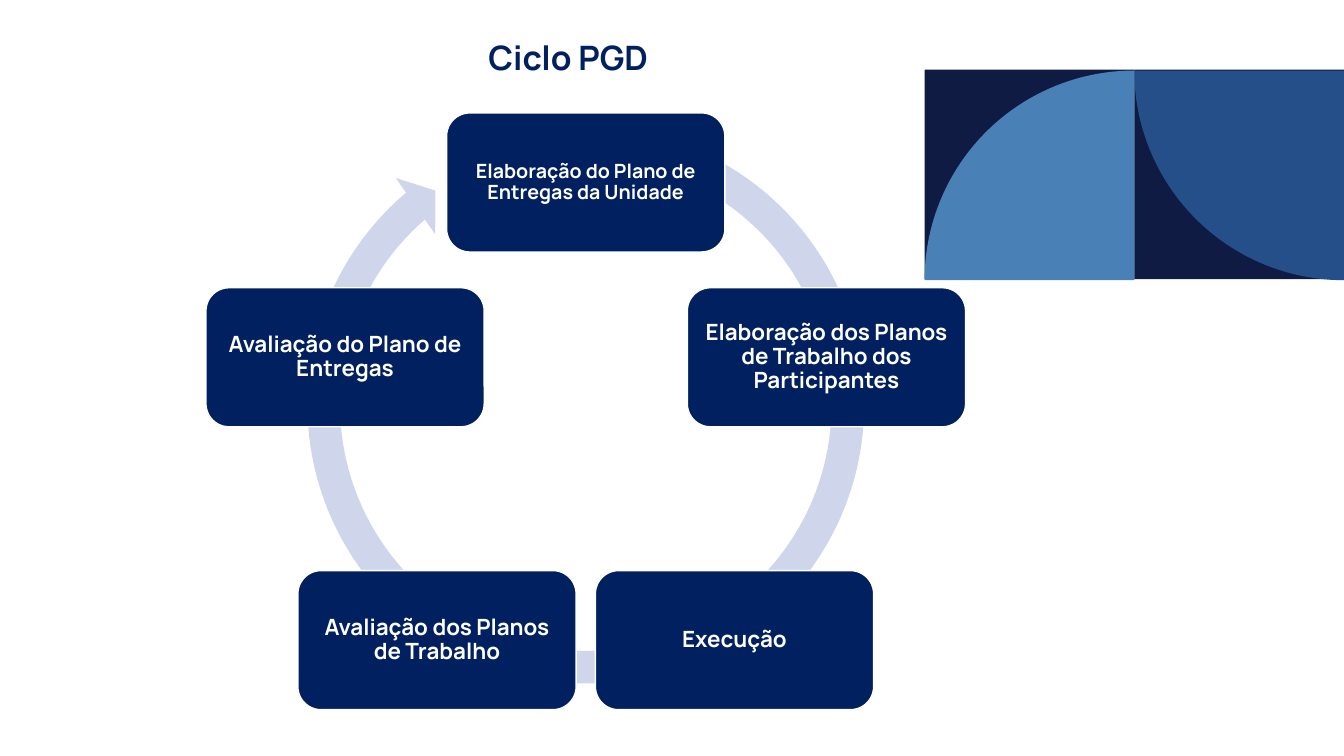
import math

import pptx
import pptx.dml.color
import pptx.enum.shapes
import pptx.enum.text
import pptx.util
from pptx.util import Inches

RGBColor = pptx.dml.color.RGBColor
MSO_SHAPE = pptx.enum.shapes.MSO_SHAPE

NAVY = RGBColor(0x00, 0x20, 0x60)
WHITE = RGBColor(0xFF, 0xFF, 0xFF)
LAVENDER = RGBColor(0xCF, 0xD5, 0xEA)
TILE_NAVY = RGBColor(0x10, 0x1B, 0x43)
TILE_BLUE = RGBColor(0x25, 0x4F, 0x89)
TILE_LIGHT = RGBColor(0x49, 0x81, 0xB6)

FONT = "Manrope"
TILE = 2.08
CENTER_X, CENTER_Y, RADIUS = 5.81, 4.32, 2.51
BOX_WIDTH, BOX_HEIGHT = 2.76, 1.38

# Cycle steps, clockwise from the top: text and size
STEPS = [
    ("Elaboração do Plano de Entregas da Unidade", 14),
    ("Elaboração dos Planos de Trabalho dos Participantes", 16),
    ("Execução", 16),
    ("Avaliação dos Planos de Trabalho", 16),
    ("Avaliação do Plano de Entregas", 16),
]


def paint(shape, color):
    shape.shadow.inherit = False
    shape.fill.solid()
    shape.fill.fore_color.rgb = color
    shape.line.fill.background()


def add_filled_shape(slide, kind, left, top, width, height, color):
    shape = slide.shapes.add_shape(
        kind, Inches(left), Inches(top), Inches(width), Inches(height))
    paint(shape, color)
    return shape


def add_quarter_disc(slide, corner_x, corner_y, start_angle, color):
    """Quarter disc around its corner; angles run clockwise from the right."""
    arc = []
    for degree in range(start_angle, start_angle + 91, 2):
        angle = math.radians(degree)
        arc.append((Inches(corner_x + TILE * math.cos(angle)),
                    Inches(corner_y + TILE * math.sin(angle))))
    builder = slide.shapes.build_freeform(Inches(corner_x), Inches(corner_y))
    builder.add_line_segments(arc, close=True)
    paint(builder.convert_to_shape(), color)


def write_text(shape, text, size, color, margins):
    frame = shape.text_frame
    frame.word_wrap = True
    frame.margin_left = frame.margin_right = Inches(margins[0])
    frame.margin_top = frame.margin_bottom = Inches(margins[1])
    paragraph = frame.paragraphs[0]
    paragraph.alignment = pptx.enum.text.PP_ALIGN.CENTER
    run = paragraph.add_run()
    run.text = text
    run.font.name = FONT
    run.font.size = pptx.util.Pt(size)
    run.font.bold = True
    run.font.color.rgb = color
    return frame


def add_title(slide, text):
    box = slide.shapes.add_textbox(
        Inches(4.6), Inches(0.3), Inches(2.07), Inches(0.54))
    frame = write_text(box, text, 24, NAVY, (0.13, 0.07))
    frame.auto_size = pptx.enum.text.MSO_AUTO_SIZE.SHAPE_TO_FIT_TEXT


def add_cycle_arrow(slide):
    arrow = add_filled_shape(
        slide, MSO_SHAPE.CIRCULAR_ARROW, 2.87, 1.08, 5.88, 5.88, LAVENDER)
    for index, value in enumerate((0.055, 3.307, 137.676, 173.91, 0.058)):
        arrow.adjustments[index] = value


def add_step(slide, index, text, size):
    angle = 2 * math.pi * index / len(STEPS)
    left = CENTER_X + RADIUS * math.sin(angle) - BOX_WIDTH / 2
    top = CENTER_Y - RADIUS * math.cos(angle) - BOX_HEIGHT / 2
    box = add_filled_shape(slide, MSO_SHAPE.ROUNDED_RECTANGLE,
                           left, top, BOX_WIDTH, BOX_HEIGHT, NAVY)
    box.line.color.rgb = WHITE
    box.line.width = pptx.util.Pt(1)
    frame = write_text(box, text, size, WHITE, (0.07, 0.07))
    frame.vertical_anchor = pptx.enum.text.MSO_ANCHOR.MIDDLE
    frame.paragraphs[0].line_spacing = 0.9


def main():
    presentation = pptx.Presentation()
    presentation.slide_width = Inches(13.33)
    presentation.slide_height = Inches(7.5)
    slide = presentation.slides.add_slide(presentation.slide_layouts[6])

    # Decorative tiles
    for left in (9.17, 11.25):
        add_filled_shape(slide, MSO_SHAPE.RECTANGLE,
                         left, 0.69, TILE, TILE, TILE_NAVY)
    add_quarter_disc(slide, 13.33, 0.7, 90, TILE_BLUE)
    add_quarter_disc(slide, 11.25, 2.78, 180, TILE_LIGHT)

    # Title and cycle
    add_title(slide, "Ciclo PGD")
    add_cycle_arrow(slide)
    for index, (text, size) in enumerate(STEPS):
        add_step(slide, index, text, size)

    presentation.save("out.pptx")


if __name__ == "__main__":
    main()
